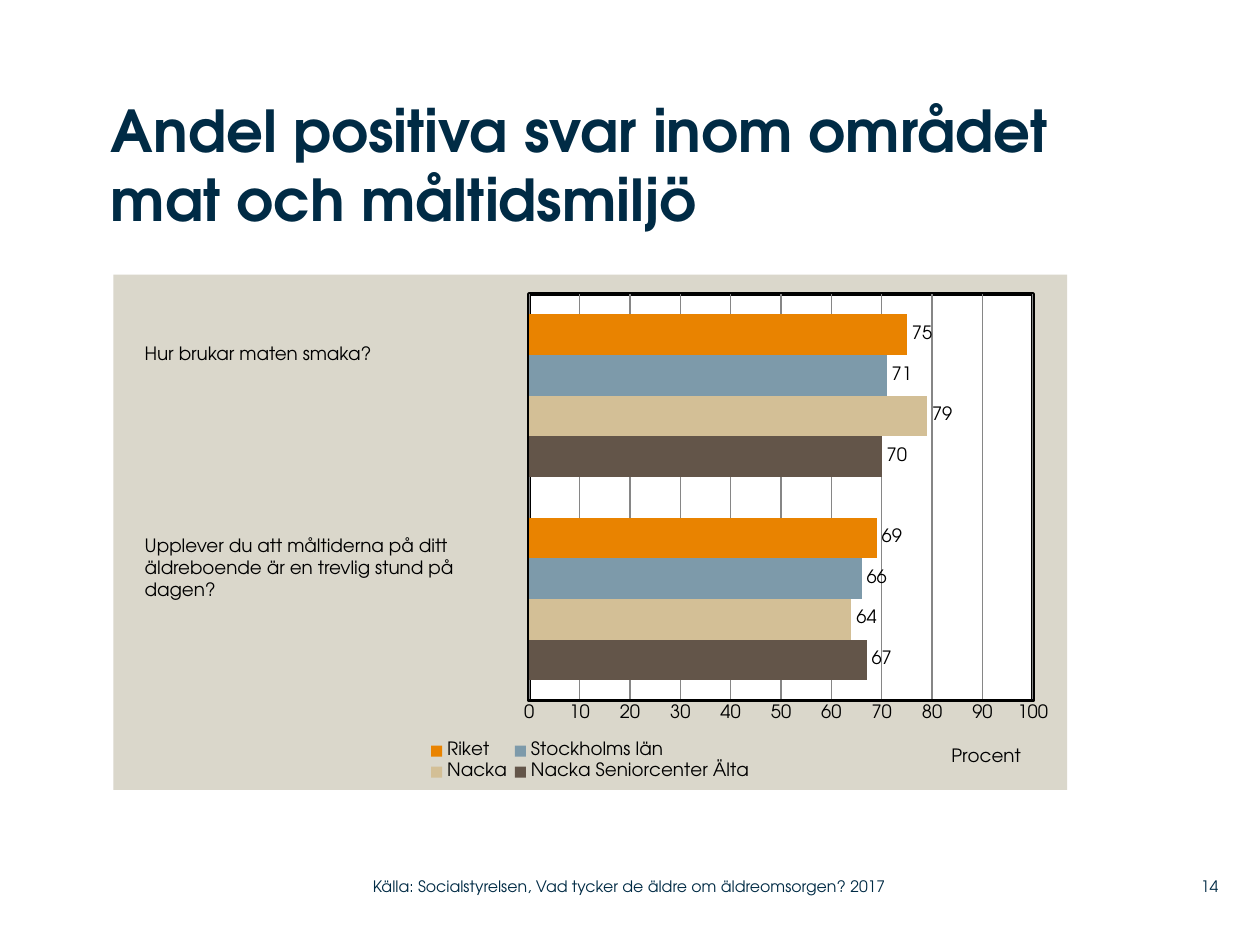
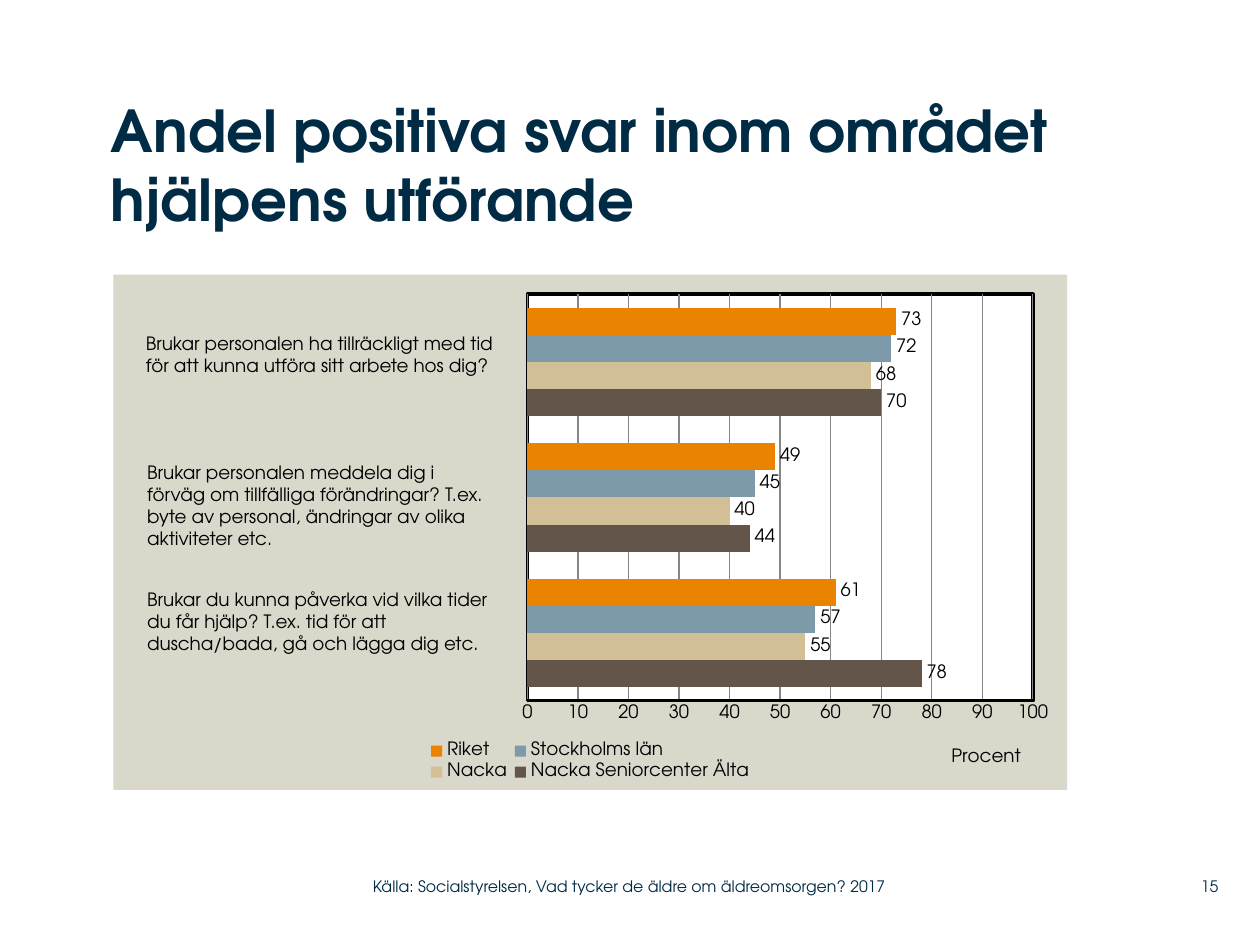
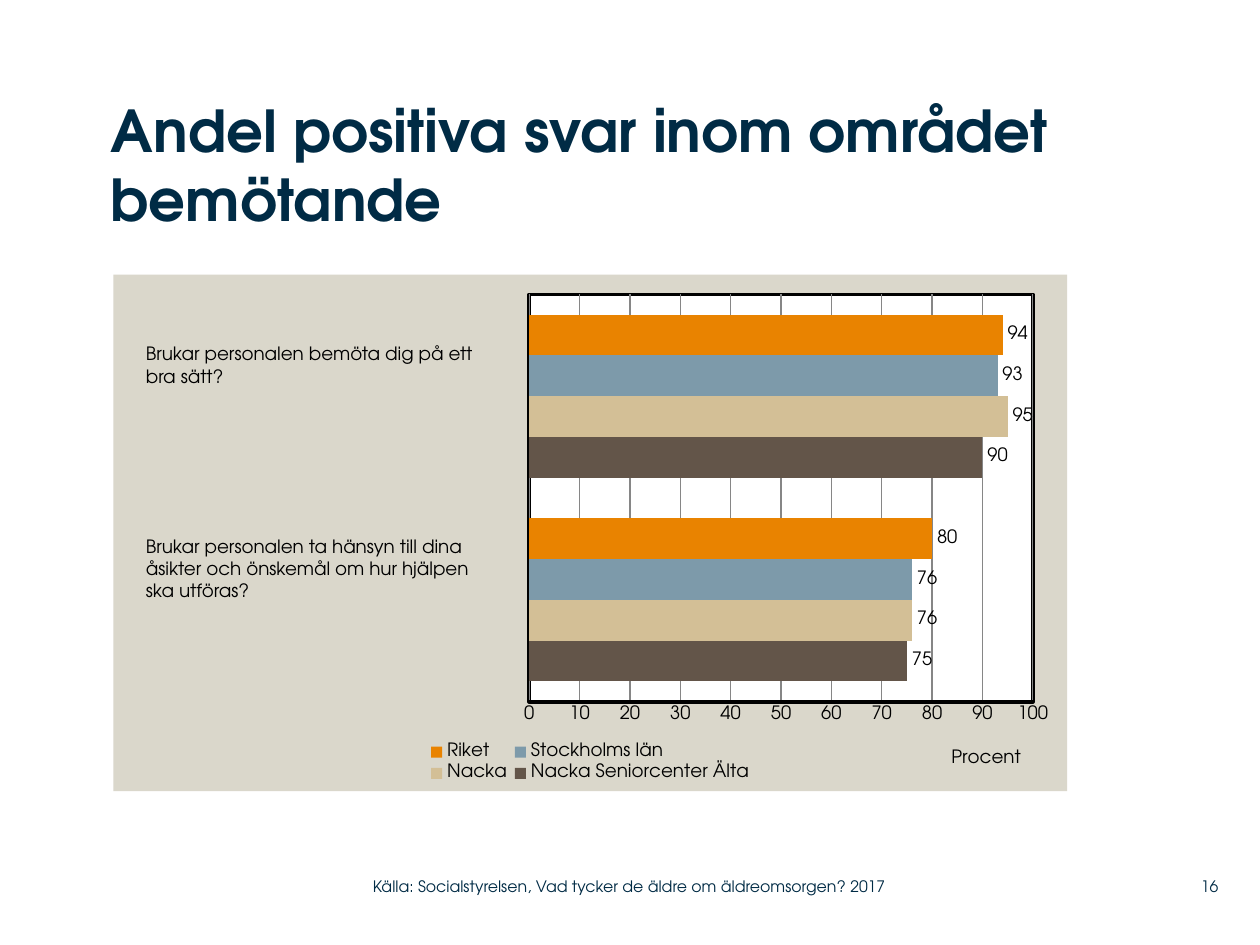
from pptx import Presentation
from pptx.chart.data import CategoryChartData
from pptx.dml.color import RGBColor
from pptx.enum.chart import XL_CHART_TYPE, XL_LABEL_POSITION, XL_LEGEND_POSITION, XL_TICK_MARK
from pptx.enum.text import MSO_ANCHOR, MSO_AUTO_SIZE, PP_ALIGN
from pptx.oxml import parse_xml
from pptx.oxml.ns import nsdecls, qn
from pptx.util import Inches, Pt

BARS = XL_CHART_TYPE.BAR_CLUSTERED
OUTER = XL_LABEL_POSITION.OUTSIDE_END
BOTTOM = XL_LEGEND_POSITION.BOTTOM
NO_TICK = XL_TICK_MARK.NONE
TOP, MIDDLE = MSO_ANCHOR.TOP, MSO_ANCHOR.MIDDLE
GROW, FIXED = MSO_AUTO_SIZE.SHAPE_TO_FIT_TEXT, MSO_AUTO_SIZE.NONE
LEFT, RIGHT = PP_ALIGN.LEFT, PP_ALIGN.RIGHT

FACE = "TeX Gyre Adventor"
COLORS = {
    "navy": "002B45", "black": "000000", "white": "FFFFFF", "panel": "DAD7CB",
    "grid": "868686", "brown": "635549", "sand": "D3BF96", "blue": "7D9AAA",
    "orange": "E98300",
}
FONTS = {
    "title": {"size": Pt(33), "bold": True, "color": "navy"},
    "label": {"size": Pt(10.5), "bold": False, "color": "black"},
    "foot": {"size": Pt(9), "bold": False, "color": "navy"},
}
FLUSH = {"margin_left": 0, "margin_right": 0, "margin_top": 0, "margin_bottom": 0}
TITLE = {**FLUSH, "vertical_anchor": TOP, "auto_size": FIXED, "word_wrap": True}
FOOT = {**FLUSH, "vertical_anchor": MIDDLE, "word_wrap": True}
LABEL = {"auto_size": GROW, "word_wrap": True}
AXIS = {
    "minimum_scale": 0, "maximum_scale": 100, "major_unit": 10,
    "major_tick_mark": NO_TICK, "minor_tick_mark": NO_TICK,
    "has_major_gridlines": True, "has_title": True,
}
TAGS = {"show_value": True, "position": OUTER}
LEGEND = {"position": BOTTOM, "include_in_layout": False}

GROUPS = [
    ("Nacka Seniorcenter Älta", "brown"),
    ("Nacka", "sand"),
    ("Stockholms län", "blue"),
    ("Riket", "orange"),
]
SOURCE = "Källa: Socialstyrelsen, Vad tycker de äldre om äldreomsorgen? 2017"
LEAD = "Andel positiva svar inom området "

PAGES = [
    {
        "topic": "mat och måltidsmiljö", "wide": 8.4, "tall": 4.09,
        "plot": (0.436, 0.038, 0.528, 0.789),
        "values": [(67, 70), (64, 79), (66, 71), (69, 75)],
        "asks": [
            (1.05, 2.67, 0.28, "Hur brukar maten smaka?"),
            (1.05, 4.19, 0.63, "Upplever du att måltiderna på ditt äldreboende är en "
             "trevlig stund på\ndagen?"),
        ],
    },
    {
        "topic": "hjälpens utförande", "wide": 7.6, "tall": 4.09,
        "plot": (0.434, 0.038, 0.53, 0.789),
        "values": [(78, 44, 70), (55, 40, 68), (57, 45, 72), (61, 49, 73)],
        "asks": [
            (1.06, 2.59, 0.45, "Brukar personalen ha tillräckligt med tid\n"
             "för att kunna utföra sitt arbete hos dig?"),
            (1.07, 3.61, 0.81, "Brukar personalen meddela dig i förväg om tillfälliga "
             "förändringar? T.ex. byte av personal, ändringar av olika aktiviteter etc."),
            (1.07, 4.62, 0.63, "Brukar du kunna påverka vid vilka tider\n"
             "du får hjälp? T.ex. tid för att\nduscha/bada, gå och lägga dig etc."),
        ],
    },
    {
        "topic": "bemötande", "wide": 7.6, "tall": 4.1,
        "plot": (0.436, 0.038, 0.528, 0.789),
        "values": [(75, 90), (76, 95), (76, 93), (80, 94)],
        "asks": [
            (1.06, 2.67, 0.45, "Brukar personalen bemöta dig på ett\nbra sätt?"),
            (1.06, 4.2, 0.63, "Brukar personalen ta hänsyn till dina\n"
             "åsikter och önskemål om hur hjälpen\nska utföras?"),
        ],
    },
]


def paint(name):
    return RGBColor.from_string(COLORS[name])


def apply(item, values):
    for key, value in values.items():
        setattr(item, key, value)


def set_font(font, style):
    values = {**FONTS[style], "name": FACE}
    font.color.rgb = paint(values.pop("color"))
    apply(font, values)


def write(shape, text, style, frame, align=LEFT):
    body = shape.text_frame
    body.text = text
    apply(body, frame)
    for para in body.paragraphs:
        para.alignment = align
        for run in para.runs:
            set_font(run.font, style)


def add_text(slide, box, text, style, frame, align=LEFT):
    shape = slide.shapes.add_textbox(*map(Inches, box))
    write(shape, text, style, frame, align)


def add_title(slide, text, wide):
    title = slide.shapes.title
    box = map(Inches, (0.88, 0.75, wide, 1.42))
    apply(title, dict(zip(("left", "top", "width", "height"), box)))
    write(title, text, "title", TITLE)


def place(node, index, box, inner=False):
    for old in node.findall(qn("c:layout")):
        node.remove(old)
    target = '<c:layoutTarget val="inner"/>' if inner else ""
    modes = "".join(f'<c:{key}Mode val="edge"/>' for key in "xy")
    sizes = "".join(f'<c:{key} val="{value}"/>' for key, value in zip("xywh", box))
    node.insert(index, parse_xml(
        f'<c:layout {nsdecls("c")}><c:manualLayout>{target}{modes}{sizes}'
        "</c:manualLayout></c:layout>"))


def make_fill(fill, edge=None):
    line = "<a:ln><a:noFill/></a:ln>"
    if edge:
        line = (f'<a:ln w="{Pt(2)}"><a:solidFill><a:srgbClr val="{COLORS[edge]}"/>'
                "</a:solidFill></a:ln>")
    return parse_xml(
        f'<c:spPr {nsdecls("c", "a")}><a:solidFill><a:srgbClr val="{COLORS[fill]}"/>'
        f"</a:solidFill>{line}</c:spPr>")


def style_axis(axis):
    apply(axis, AXIS)
    set_font(axis.tick_labels.font, "label")
    for line, color, width in (
        (axis.format.line, "black", 2),
        (axis.major_gridlines.format.line, "grid", 0.75),
    ):
        line.color.rgb = paint(color)
        line.width = Pt(width)
    title = axis.axis_title
    title.text_frame.text = "Procent"
    set_font(title.text_frame.paragraphs[0].runs[0].font, "label")
    place(title._element, 1, (0.875, 0.91))


def add_bars(slide, page):
    data = CategoryChartData()
    data.categories = [str(n + 1) for n in range(len(page["asks"]))]
    for (name, _), values in zip(GROUPS, page["values"]):
        data.add_series(name, values)
    box = map(Inches, (0.9, 2.18, 7.57, page["tall"]))
    chart = slide.shapes.add_chart(BARS, *box, data).chart
    set_font(chart.font, "label")
    apply(chart, {"has_title": False, "has_legend": True})
    apply(chart.legend, LEGEND)
    set_font(chart.legend.font, "label")
    place(chart.legend._element, 1, (0.325, 0.9, 0.35, 0.09))
    chart.category_axis.visible = False
    style_axis(chart.value_axis)
    plot = chart.plots[0]
    apply(plot, {"gap_width": 100, "overlap": 0, "vary_by_categories": False})
    for series, (_, color) in zip(plot.series, GROUPS):
        series.format.fill.solid()
        series.format.fill.fore_color.rgb = paint(color)
        apply(series.data_labels, TAGS)
        set_font(series.data_labels.font, "label")
    root = chart._chartSpace
    root.chart.addnext(make_fill("panel"))
    area = root.chart.plotArea
    area.append(make_fill("white", "black"))
    place(area, 0, page["plot"], inner=True)


def add_foot(slide, number):
    add_text(slide, (9.2, 6.89, 0.47, 0.29), str(number), "foot", FOOT, RIGHT)
    add_text(slide, (2.96, 6.89, 4.43, 0.29), SOURCE, "foot", FOOT)


def main():
    deck = Presentation()
    deck.slide_width, deck.slide_height = Inches(10), Inches(7.5)
    for number, page in enumerate(PAGES, 14):
        slide = deck.slides.add_slide(deck.slide_layouts[5])
        add_bars(slide, page)
        add_title(slide, LEAD + page["topic"], page["wide"])
        for left, top, tall, text in page["asks"]:
            add_text(slide, (left, top, 2.97, tall), text, "label", LABEL)
        add_foot(slide, number)
    deck.save("out.pptx")


if __name__ == "__main__":
    main()
